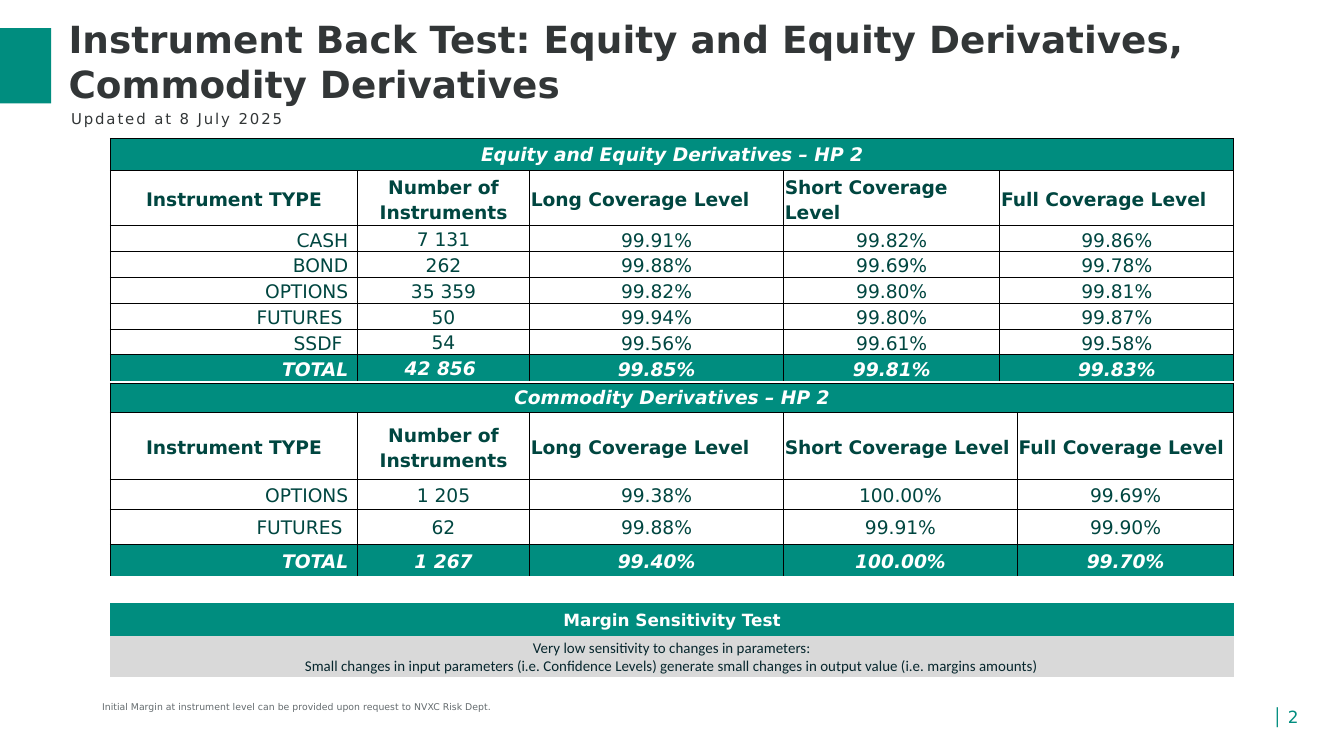
import pptx
import pptx.dml.color
import pptx.enum.shapes
import pptx.enum.text
import pptx.oxml
import pptx.oxml.ns
import pptx.util

Inches = pptx.util.Inches
Pt = pptx.util.Pt
ALIGN = pptx.enum.text.PP_ALIGN
ANCHOR = pptx.enum.text.MSO_ANCHOR

# Content
TITLE = "Instrument Back Test: Equity and Equity Derivatives, Commodity Derivatives"
UPDATED = "Updated at 8 July 2025"
FOOTNOTE = "Initial Margin at instrument level can be provided upon request to NVXC Risk Dept."
PAGE_NUMBER = "│ 2"
HEADINGS = ["Instrument TYPE", "Number of Instruments", "Long Coverage Level",
            "Short Coverage Level", "Full Coverage Level"]
BACK_TESTS = [
    {
        "heading": "Equity and Equity Derivatives – HP 2",
        "top": 1.03,
        "columns": [1.84, 1.28, 1.89, 1.61, 1.74],
        "heights": [0.24, 0.41] + [0.16] * 6 + [0.18],
        "value_anchor": ANCHOR.BOTTOM,
        "rows": [
            ["CASH", "7 131", "99.91%", "99.82%", "99.86%"],
            ["BOND", "262", "99.88%", "99.69%", "99.78%"],
            ["OPTIONS", "35 359", "99.82%", "99.80%", "99.81%"],
            ["FUTURES ", "50", "99.94%", "99.80%", "99.87%"],
            ["SSDF ", "54", "99.56%", "99.61%", "99.58%"],
            ["TOTAL", "42 856 ", "99.85%", "99.81%", "99.83%"],
        ],
    },
    {
        "heading": "Commodity Derivatives – HP 2",
        "top": 2.85,
        "columns": [1.84, 1.28, 1.89, 1.74, 1.61],
        "heights": [0.22, 0.5, 0.22, 0.26, 0.24, 0.2],
        "value_anchor": ANCHOR.MIDDLE,
        "rows": [
            ["OPTIONS", "1 205", "99.38%", "100.00%", "99.69%"],
            ["FUTURES ", "62", "99.88%", "99.91%", "99.90%"],
            ["TOTAL", "1 267", "99.40%", "100.00%", "99.70%"],
        ],
    },
]
SENSITIVITY_HEADING = "Margin Sensitivity Test"
SENSITIVITY_LINES = [
    "Very low sensitivity to changes in parameters:",
    "Small changes in input parameters (i.e. Confidence Levels) generate small "
    "changes in output value (i.e. margins amounts)",
]

THEME = {
    "font": "DejaVu Sans", "note_font": "Calibri",
    "teal": "008D7F", "dark_teal": "004640", "ink": "323637", "navy": "06262D",
    "grey": "D9D9D9", "muted": "646B6E", "white": "FFFFFF", "border": "000000",
    "title": 20, "table": 10, "band": 9, "small": 8, "footnote": 5,
}
TABLE_LEFT, TABLE_WIDTH = 0.82, 8.36
PLAIN_TABLE_STYLE = "{2D5ABB26-0587-4C30-8999-92F81FD0307C}"
HEADING_INSETS = (0.01, 0.01, 0.01, 0)
LABEL_INSETS = (0.07, 0, 0.07, 0)
VALUE_INSETS = (0.02, 0, 0.02, 0)


def color(name):
    return pptx.dml.color.RGBColor.from_string(THEME[name])


def add_run(paragraph, text, size, ink, font="font", bold=False, italic=False):
    run = paragraph.add_run()
    run.text = text
    run.font.name = THEME[font]
    run.font.size = Pt(THEME[size])
    run.font.color.rgb = color(ink)
    run.font.bold = bold
    run.font.italic = italic
    return run


def set_insets(target, insets):
    sides = ("margin_left", "margin_top", "margin_right", "margin_bottom")
    for side, inset in zip(sides, insets):
        setattr(target, side, Inches(inset))


def add_text(slide, box, text, size, ink, insets=(0, 0, 0, 0)):
    shape = slide.shapes.add_textbox(*map(Inches, box))
    shape.text_frame.word_wrap = True
    set_insets(shape.text_frame, insets)
    paragraph = shape.text_frame.paragraphs[0]
    return paragraph, add_run(paragraph, text, size, ink)


def add_plain_table(slide, top, columns, heights):
    frame = slide.shapes.add_table(
        len(heights), len(columns), Inches(TABLE_LEFT), Inches(top),
        Inches(TABLE_WIDTH), Inches(sum(heights)))
    table = frame.table
    table.first_row = table.horz_banding = False
    table._tbl.tblPr.find(pptx.oxml.ns.qn("a:tableStyleId")).text = PLAIN_TABLE_STYLE
    for column, width in zip(table.columns, columns):
        column.width = Inches(width)
    for row, height in zip(table.rows, heights):
        row.height = Inches(height)
    return table


def set_borders(cell, drawn_sides):
    solid = f'<a:solidFill><a:srgbClr val="{THEME["border"]}"/></a:solidFill>'
    for side in "LRTB":
        paint = solid if side in drawn_sides else "<a:noFill/>"
        cell._tc.get_or_add_tcPr().append(pptx.oxml.parse_xml(
            f'<a:ln{side} {pptx.oxml.ns.nsdecls("a")} w="6350">{paint}</a:ln{side}>'))


def fill_cell(cell, lines, insets, fill=None, anchor=ANCHOR.MIDDLE,
              align=ALIGN.CENTER, spaced=False, **style):
    set_insets(cell, insets)
    cell.vertical_anchor = anchor
    if fill:
        cell.fill.solid()
        cell.fill.fore_color.rgb = color(fill)
    else:
        cell.fill.background()
    for index, line in enumerate(lines):
        frame = cell.text_frame
        paragraph = frame.add_paragraph() if index else frame.paragraphs[0]
        paragraph.alignment = align
        if spaced:
            paragraph.line_spacing = 1.15
            paragraph.space_after = Pt(6)
        add_run(paragraph, line, **style)


def add_back_test(slide, test):
    table = add_plain_table(slide, test["top"], test["columns"], test["heights"])
    total_row = len(test["rows"]) + 1
    for row in range(len(test["heights"])):
        sides = "LRTB" if row < total_row else "LRT" if row == total_row else ""
        for column in range(len(HEADINGS)):
            set_borders(table.cell(row, column), sides)

    # Heading band and column headings
    table.cell(0, 0).merge(table.cell(0, len(HEADINGS) - 1))
    fill_cell(table.cell(0, 0), [test["heading"]], HEADING_INSETS, "teal",
              size="table", ink="white", bold=True, italic=True)
    for column, heading in enumerate(HEADINGS):
        fill_cell(table.cell(1, column), [heading],
                  HEADING_INSETS if column else LABEL_INSETS,
                  align=ALIGN.LEFT if column > 1 else ALIGN.CENTER, spaced=True,
                  size="table", ink="dark_teal", bold=True)

    # Instrument rows and total
    for row, values in enumerate(test["rows"], start=2):
        total = row == total_row
        for column, value in enumerate(values):
            fill_cell(table.cell(row, column), [value],
                      VALUE_INSETS if column else LABEL_INSETS,
                      "teal" if total else None,
                      ANCHOR.MIDDLE if column == 1 else test["value_anchor"],
                      ALIGN.CENTER if column else ALIGN.RIGHT, spaced=True,
                      size="table", ink="white" if total else "dark_teal",
                      bold=total, italic=total)


def main():
    # Widescreen slide, 16:9
    presentation = pptx.Presentation()
    presentation.slide_width = Inches(10)
    presentation.slide_height = Inches(10 * 9 / 16)
    slide = presentation.slides.add_slide(presentation.slide_layouts[5])

    # Title with accent block
    accent = slide.shapes.add_shape(pptx.enum.shapes.MSO_SHAPE.RECTANGLE,
                                    *map(Inches, (0, 0.21, 0.38, 0.56)))
    accent.shadow.inherit = False
    accent.fill.solid()
    accent.fill.fore_color.rgb = color("teal")
    accent.line.fill.background()
    title = slide.shapes.title
    title.left, title.top, title.width, title.height = map(Inches, (0.51, 0.3, 9.44, 0.31))
    frame = title.text_frame
    frame.word_wrap = True
    frame.auto_size = pptx.enum.text.MSO_AUTO_SIZE.NONE
    frame.vertical_anchor = ANCHOR.MIDDLE
    set_insets(frame, (0, 0.05, 0.1, 0.05))
    frame.paragraphs[0].alignment = ALIGN.LEFT
    add_run(frame.paragraphs[0], TITLE, "title", "ink", bold=True)

    # Date line
    _, run = add_text(slide, (0.43, 0.77, 8.62, 0.24), UPDATED, "small", "ink",
                      (0.1, 0.05, 0.1, 0.05))
    run.font._element.set("spc", "100")

    # Tables
    sensitivity = add_plain_table(slide, 4.49, [TABLE_WIDTH], [0.24, 0.31])
    fill_cell(sensitivity.cell(0, 0), [SENSITIVITY_HEADING], HEADING_INSETS, "teal",
              size="band", ink="white", bold=True)
    fill_cell(sensitivity.cell(1, 0), SENSITIVITY_LINES, HEADING_INSETS, "grey",
              size="small", ink="navy", font="note_font")
    for test in BACK_TESTS:
        add_back_test(slide, test)

    # Footnote and page number
    add_text(slide, (0.76, 5.22, 7.1, 0.08), FOOTNOTE, "footnote", "muted")
    paragraph, _ = add_text(slide, (9.31, 5.26, 0.51, 0.15), PAGE_NUMBER, "band", "teal")
    paragraph.alignment = ALIGN.CENTER

    presentation.save("out.pptx")


if __name__ == "__main__":
    main()
